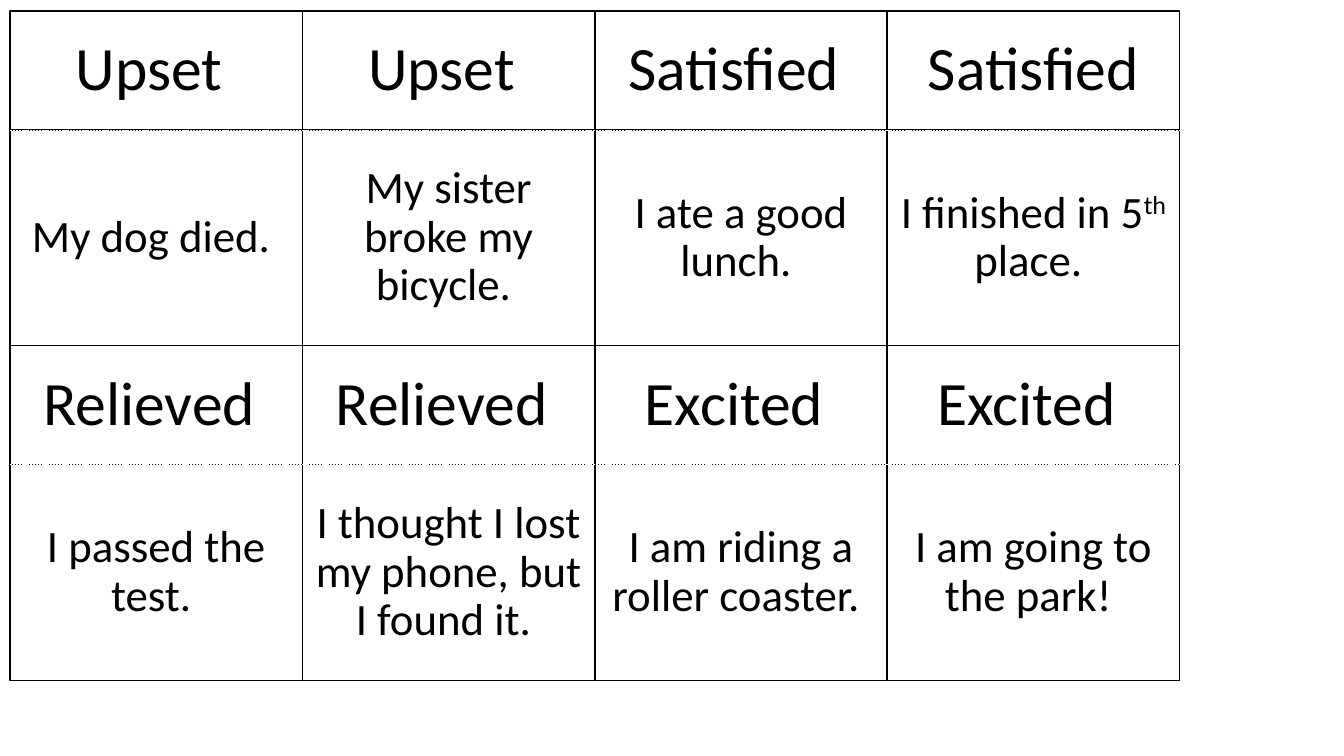
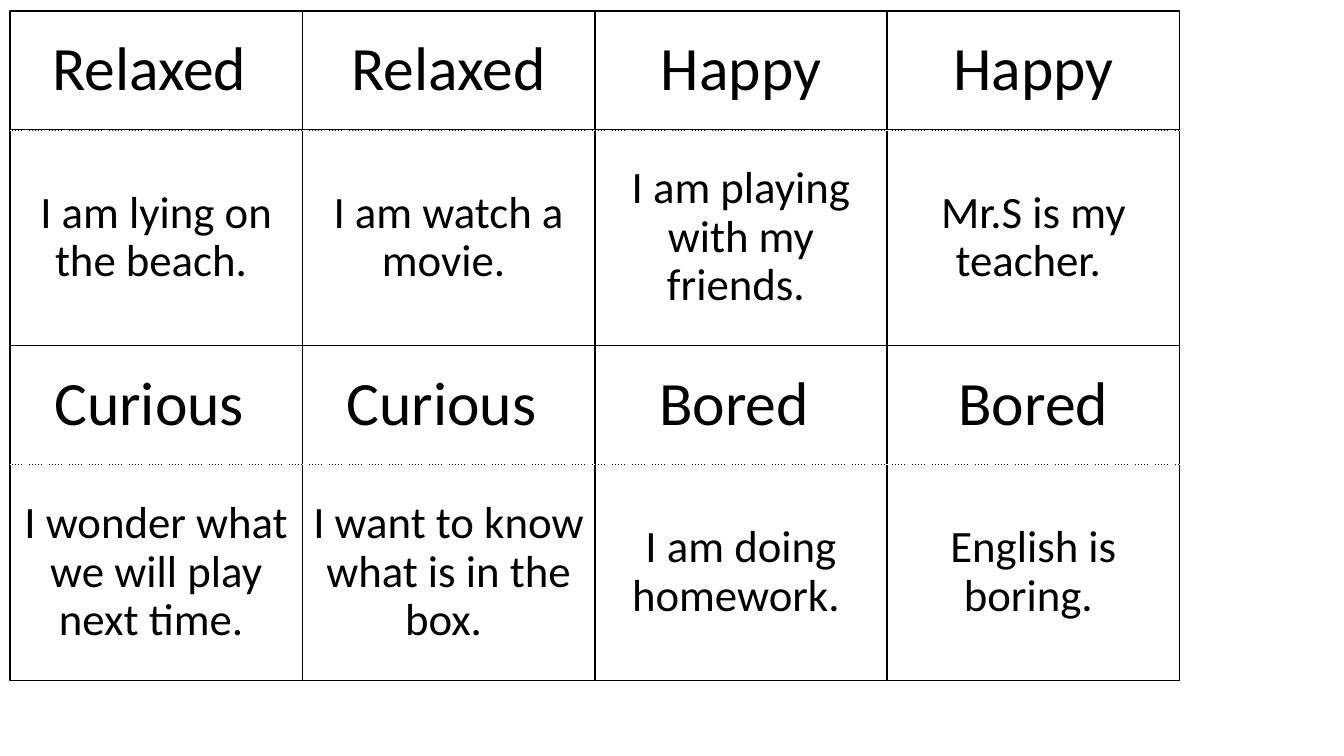
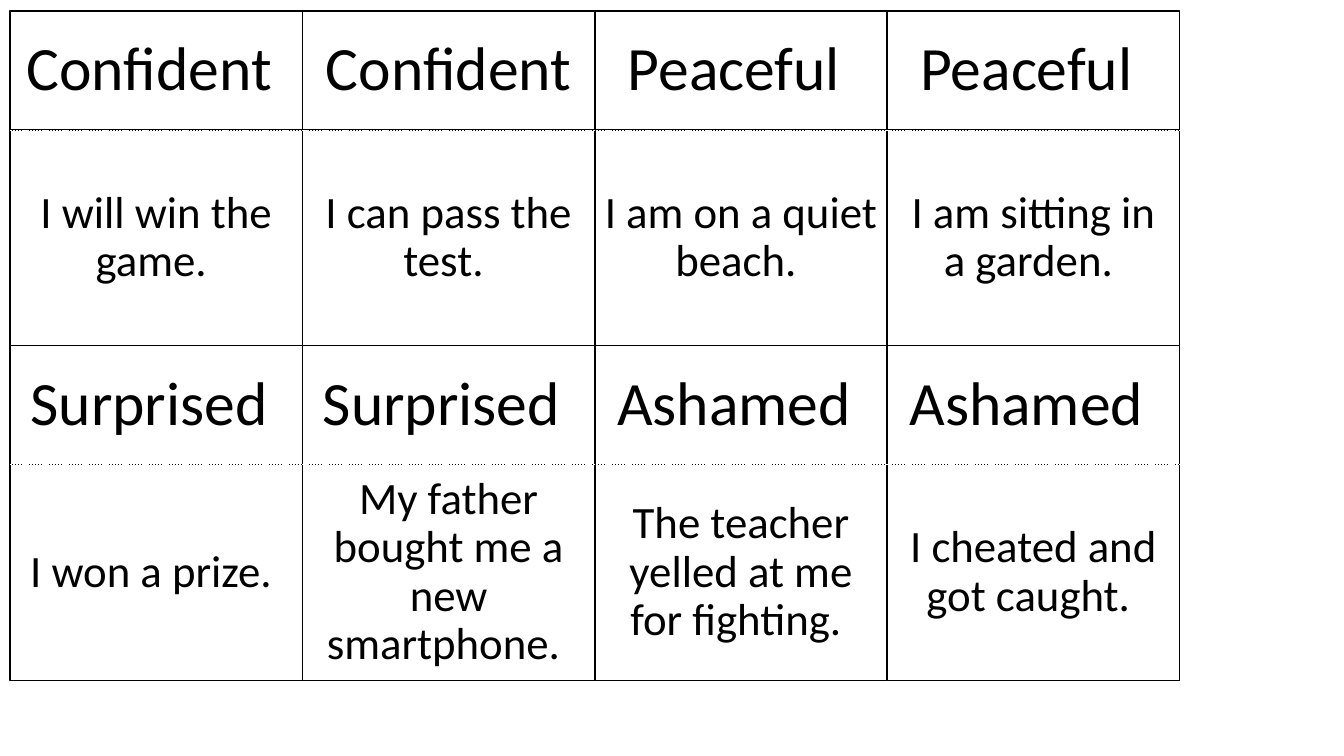
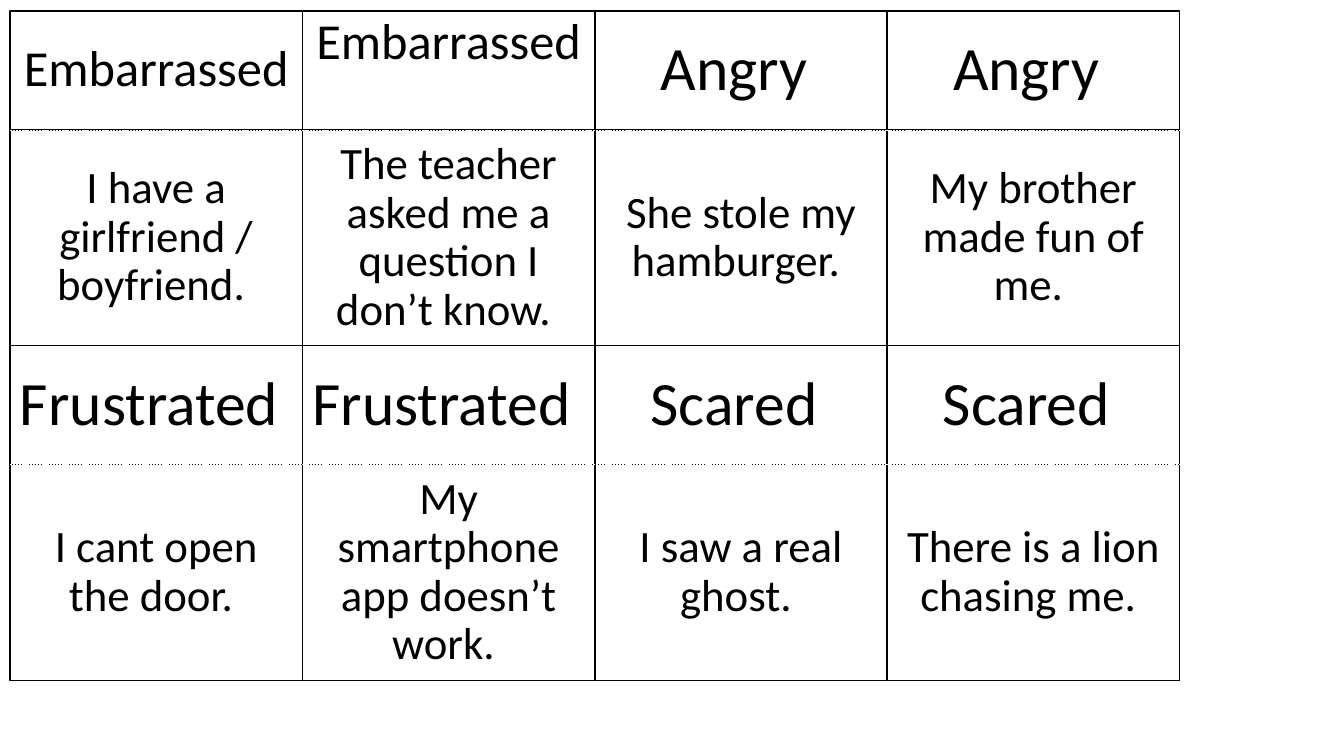
"""Build four sheets of feeling cards, each a feeling above an example."""
from dataclasses import dataclass

from lxml.etree import SubElement
from pptx import Presentation
from pptx.dml.color import RGBColor
from pptx.enum.dml import MSO_LINE
from pptx.enum.shapes import MSO_CONNECTOR, MSO_SHAPE
from pptx.enum.text import MSO_ANCHOR, PP_ALIGN
from pptx.oxml.ns import qn
from pptx.util import Inches, Pt


@dataclass(frozen=True)
class Theme:
    font: str = "Calibri"
    ink: RGBColor = RGBColor(0, 0, 0)
    paper: RGBColor = RGBColor(255, 255, 255)
    feeling_size: int = 44
    long_feeling_size: int = 36
    example_size: int = 32
    line_spacing: float = 0.9
    border: float = 1
    fold: float = 0.5


@dataclass(frozen=True)
class Grid:
    left: float = 0.1
    top: float = 0.11
    column: float = 2.9
    columns: int = 4
    feeling: float = 1.18
    example: float = 2.14

    def x(self, column):
        return self.left + column * self.column

    def y(self, row):
        return self.top + row * (self.feeling + self.example)


@dataclass(frozen=True)
class Card:
    feeling: str
    example: str
    lift: float = 0


THEME = Theme()
GRID = Grid()
LONGEST_FULL_SIZE = 10

SHEETS = [
    [
        [Card("Upset ", "My dog died. "),
         Card("Relieved ", "I passed the test. ")],
        [Card("Upset ", "My sister broke my bicycle. "),
         Card("Relieved ", "I thought I lost my phone, but I found it. ")],
        [Card("Satisfied ", "I ate a good lunch. "),
         Card("Excited ", "I am riding a roller coaster. ")],
        [Card("Satisfied", "I finished in 5^th^ place. "),
         Card("Excited ", "I am going to the park! ")],
    ],
    [
        [Card("Relaxed ", "I am lying on the beach. "),
         Card("Curious ", "I wonder what we will play next time. ")],
        [Card("Relaxed", "I am watch a movie. "),
         Card("Curious ", "I want to know what is in the box. ")],
        [Card("Happy", "I am playing with my friends. "),
         Card("Bored ", "I am doing homework. ")],
        [Card("Happy", "Mr.S is my teacher. "),
         Card("Bored", "English is boring. ")],
    ],
    [
        [Card("Confident ", "I will win the game. "),
         Card("Surprised ", "I won a prize. ")],
        [Card("Confident", "I can pass the test. "),
         Card("Surprised ", "My father bought me a new smartphone. ")],
        [Card("Peaceful ", "I am on a quiet beach. "),
         Card("Ashamed ", "The teacher yelled at me for fighting. ")],
        [Card("Peaceful ", "I am sitting in a garden. "),
         Card("Ashamed ", "I cheated and got caught. ")],
    ],
    [
        [Card("Embarrassed ", "I have a girlfriend / boyfriend. "),
         Card("Frustrated ", "I cant open the door. ")],
        [Card("Embarrassed", "The teacher asked me a question I don’t know. ", lift=0.54),
         Card("Frustrated ", "My smartphone app doesn’t work. ")],
        [Card("Angry ", "She stole my hamburger. "),
         Card("Scared ", "I saw a real ghost. ")],
        [Card("Angry ", "My brother made fun of me. "),
         Card("Scared ", "There is a lion chasing me. ")],
    ],
]


def write(frame, text, *, size, lift=0):
    """Write centred text, with superscripts between carets."""
    frame.word_wrap = True
    frame.vertical_anchor = MSO_ANCHOR.MIDDLE
    frame.margin_bottom = Inches(0.05 + lift)
    paragraph = frame.paragraphs[0]
    paragraph.alignment = PP_ALIGN.CENTER
    paragraph.line_spacing = THEME.line_spacing
    for index, part in enumerate(text.split("^")):
        run = paragraph.add_run()
        run.text = part
        run.font.name = THEME.font
        run.font.size = Pt(size)
        run.font.color.rgb = THEME.ink
        if index % 2:
            run.font._element.set("baseline", "30000")


def add_box(slide, text, x, y, height, **text_format):
    """Add one bordered box, a column wide."""
    box = slide.shapes.add_shape(
        MSO_SHAPE.RECTANGLE, Inches(x), Inches(y), Inches(GRID.column), Inches(height))
    box.shadow.inherit = False
    box.fill.solid()
    box.fill.fore_color.rgb = THEME.paper
    box.line.color.rgb = THEME.ink
    box.line.width = Pt(THEME.border)
    write(box.text_frame, text, **text_format)


def add_card(slide, card, column, row):
    """Add a feeling with its example below."""
    x, y = GRID.x(column), GRID.y(row)
    is_long = len(card.feeling.strip()) > LONGEST_FULL_SIZE
    feeling_size = THEME.long_feeling_size if is_long else THEME.feeling_size
    add_box(slide, card.feeling, x, y, GRID.feeling, size=feeling_size, lift=card.lift)
    add_box(slide, card.example, x, y + GRID.feeling, GRID.example, size=THEME.example_size)


def add_fold(slide, row):
    """Add the dashed line between a row's feelings and examples."""
    y = Inches(GRID.y(row) + GRID.feeling)
    fold = slide.shapes.add_connector(
        MSO_CONNECTOR.STRAIGHT, Inches(GRID.x(0)), y, Inches(GRID.x(GRID.columns)), y)
    fold.line.color.rgb = THEME.paper
    fold.line.width = Pt(THEME.fold)
    fold.line.dash_style = MSO_LINE.SQUARE_DOT
    SubElement(fold._element.spPr, qn("a:effectLst"))


def add_sheet(deck, columns):
    """Add one slide of cards."""
    slide = deck.slides.add_slide(deck.slide_layouts[6])
    for column, cards in enumerate(columns):
        for row, card in enumerate(cards):
            add_card(slide, card, column, row)
    for row in range(len(columns[0])):
        add_fold(slide, row)


def main():
    """Build and save the deck."""
    deck = Presentation()
    deck.slide_width, deck.slide_height = Inches(13.33), Inches(7.5)
    for columns in SHEETS:
        add_sheet(deck, columns)
    deck.save("out.pptx")


if __name__ == "__main__":
    main()
